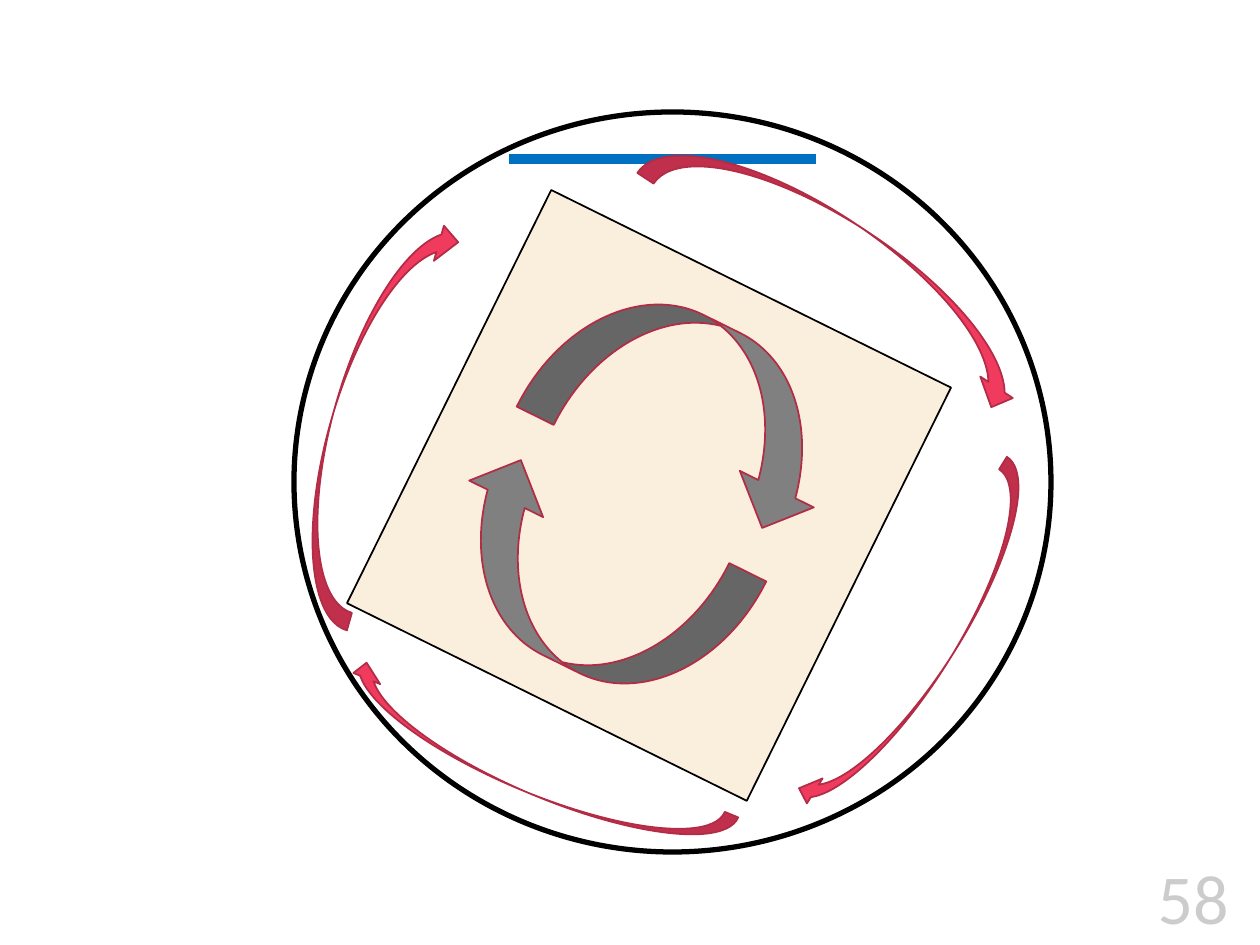
from typing import NamedTuple

from lxml import etree
from pptx import Presentation
from pptx.dml.color import RGBColor
from pptx.enum.shapes import MSO_CONNECTOR, MSO_SHAPE
from pptx.enum.text import MSO_ANCHOR, PP_ALIGN
from pptx.oxml.ns import qn
from pptx.util import Emu, Pt

ELLIPSE = MSO_SHAPE.OVAL
SQUARE = MSO_SHAPE.RECTANGLE
ARROW = MSO_SHAPE.CURVED_DOWN_ARROW
STRAIGHT = MSO_CONNECTOR.STRAIGHT
BOTTOM = MSO_ANCHOR.BOTTOM
RIGHT = PP_ALIGN.RIGHT

EMU_PER_PX = 914400 / 126
COLORS = {
    "white": "FFFFFF",
    "black": "000000",
    "cream": "FAEEDC",
    "gray": "808080",
    "red": "F03B5E",
    "dark_red": "B22C46",
    "blue": "0070C0",
}
TILT = 26.3


class Figure(NamedTuple):
    kind: MSO_SHAPE
    left: int
    top: int
    width: int
    height: int
    fill: str
    line: str
    weight: int = 1
    rotation: float = 0


CIRCLE = Figure(ELLIPSE, 294, 112, 757, 740, "white", "black", 3)
TILTED_SQUARE = Figure(SQUARE, 426, 265, 446, 461, "cream", "black", 1, TILT)
INNER_ARROWS = [
    Figure(ARROW, 537, 320, 315, 165, "gray", "dark_red", 1, TILT),
    Figure(ARROW, 431, 503, 315, 165, "gray", "dark_red", 1, TILT + 180),
]
OUTER_ARROWS = [
    Figure(ARROW, 622, 224, 444, 78, "red", "dark_red", 1, 33.5),
    Figure(ARROW, 326, 735, 417, 58, "red", "dark_red", 1, 202.6),
    Figure(ARROW, 721, 615, 406, 59, "red", "dark_red", 1, 122.1),
    Figure(ARROW, 159, 381, 422, 73, "red", "dark_red", 1, 286),
]


def px(length: int) -> Emu:
    return Emu(round(length * EMU_PER_PX))


def color(name: str) -> RGBColor:
    return RGBColor.from_string(COLORS[name])


def draw_figure(shapes, figure: Figure) -> None:
    shape = shapes.add_shape(
        figure.kind, px(figure.left), px(figure.top), px(figure.width), px(figure.height)
    )
    shape.shadow.inherit = False
    shape.rotation = figure.rotation
    shape.fill.solid()
    shape.fill.fore_color.rgb = color(figure.fill)
    shape.line.color.rgb = color(figure.line)
    shape.line.width = Pt(figure.weight)


def draw_bar(shapes, left: int, right: int, top: int) -> None:
    bar = shapes.add_connector(STRAIGHT, px(left), px(top), px(right), px(top))
    bar.line.color.rgb = color("blue")
    bar.line.width = Pt(6)
    etree.SubElement(bar.element.spPr, qn("a:effectLst"))


def draw_page_number(shapes, number: str) -> None:
    box = shapes.add_textbox(px(939), px(752), px(302), px(193))
    frame = box.text_frame
    frame.word_wrap = True
    frame.vertical_anchor = BOTTOM
    para = frame.paragraphs[0]
    para.alignment = RIGHT
    span = para.add_run()
    span.text = number
    span.font.name = "Calibri"
    span.font.size = Pt(40)
    span.font.color.rgb = color("black")
    tint = span.font.element.find(".//" + qn("a:srgbClr")) if hasattr(span.font, "element") \
        else para.runs[0]._r.find(".//" + qn("a:srgbClr"))
    etree.SubElement(tint, qn("a:alpha"), val="20000")


def main() -> None:
    deck = Presentation()
    deck.slide_width, deck.slide_height = px(1260), px(945)
    page = deck.slides.add_slide(deck.slide_layouts[6])

    draw_figure(page.shapes, CIRCLE)
    rotor = page.shapes.add_group_shape()
    for figure in [TILTED_SQUARE, *INNER_ARROWS]:
        draw_figure(rotor.shapes, figure)
    draw_page_number(page.shapes, "58")
    draw_bar(page.shapes, 509, 816, 159)
    for figure in OUTER_ARROWS:
        draw_figure(page.shapes, figure)

    deck.save("out.pptx")


if __name__ == "__main__":
    main()
